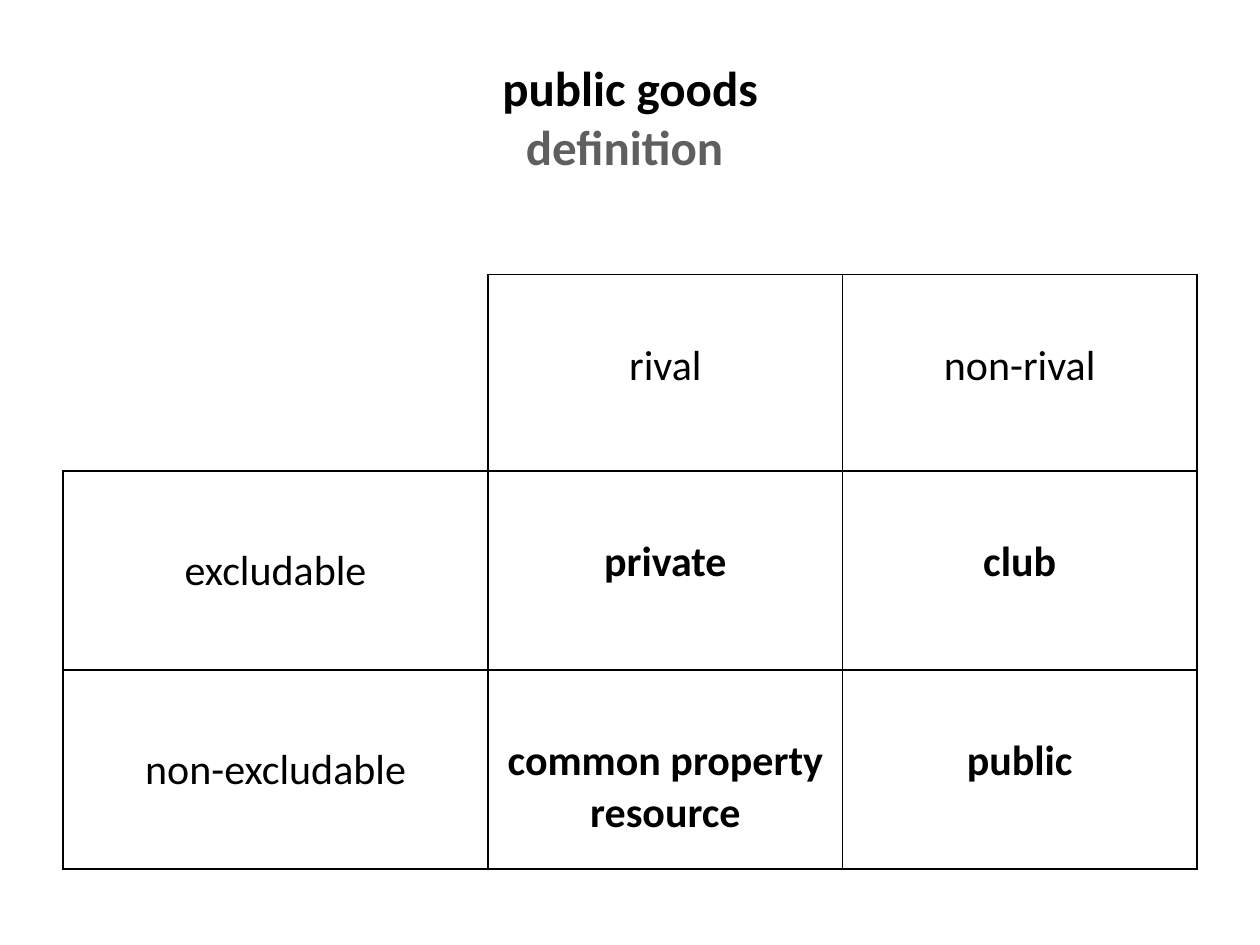
from lxml.etree import SubElement
from pptx import Presentation
from pptx.dml.color import RGBColor
from pptx.enum.text import MSO_ANCHOR as Anchor, PP_ALIGN as Align
from pptx.oxml.ns import qn
from pptx.util import Pt


def format_run(run, size, color, bold):
    run.font.name = "Calibri"
    run.font.size = Pt(size)
    run.font.bold = bold
    run.font.color.rgb = RGBColor.from_string(color)


def add_border(cell, side, visible):
    line = SubElement(cell._tc.get_or_add_tcPr(), qn(f"a:ln{side}"), w=str(Pt(1)))
    if visible:
        fill = SubElement(line, qn("a:solidFill"))
        SubElement(fill, qn("a:srgbClr"), val="000000")
    else:
        SubElement(line, qn("a:noFill"))


presentation = Presentation()
presentation.slide_width, presentation.slide_height = Pt(720), Pt(540)
slide = presentation.slides.add_slide(presentation.slide_layouts[5])

# Title in two lines
title = slide.shapes.title
title.left, title.top, title.width, title.height = Pt(36), Pt(21.6), Pt(648), Pt(90)
title.text_frame.vertical_anchor = Anchor.MIDDLE
paragraph = title.text_frame.paragraphs[0]
paragraph.text = "public goods\vdefinition "
paragraph.alignment = Align.CENTER
for run, color in zip(paragraph.runs, ("000000", "5F5F5F")):
    format_run(run, 28, color, True)

# Table of goods by rivalry and excludability
rows = [
    ["", "rival", "non-rival"],
    ["excludable", "private", "club"],
    ["non-excludable", "common property resource", "public"],
]
column_widths = [243, 202.5, 202.5]
row_heights = [112.5, 113.75, 113.75]
table = slide.shapes.add_table(
    3, 3, Pt(36), Pt(156.75), Pt(sum(column_widths)), Pt(sum(row_heights))
).table
table.first_row = table.horz_banding = False
for column, width in zip(table.columns, column_widths):
    column.width = Pt(width)
for row, height in zip(table.rows, row_heights):
    row.height = Pt(height)

for row_index, labels in enumerate(rows):
    for column_index, label in enumerate(labels):
        cell = table.cell(row_index, column_index)
        # The empty corner is open to the left and the top
        for side in "LRTB":
            add_border(cell, side, bool(label) or side in "RB")
        cell.fill.background()
        cell.vertical_anchor = Anchor.TOP
        cell.margin_top = Pt(42.6 if column_index == 0 else 37.7)
        paragraph = cell.text_frame.paragraphs[0]
        paragraph.text = label
        paragraph.alignment = Align.CENTER
        for run in paragraph.runs:
            format_run(run, 24, "000000", row_index > 0 and column_index > 0)

presentation.save("out.pptx")
